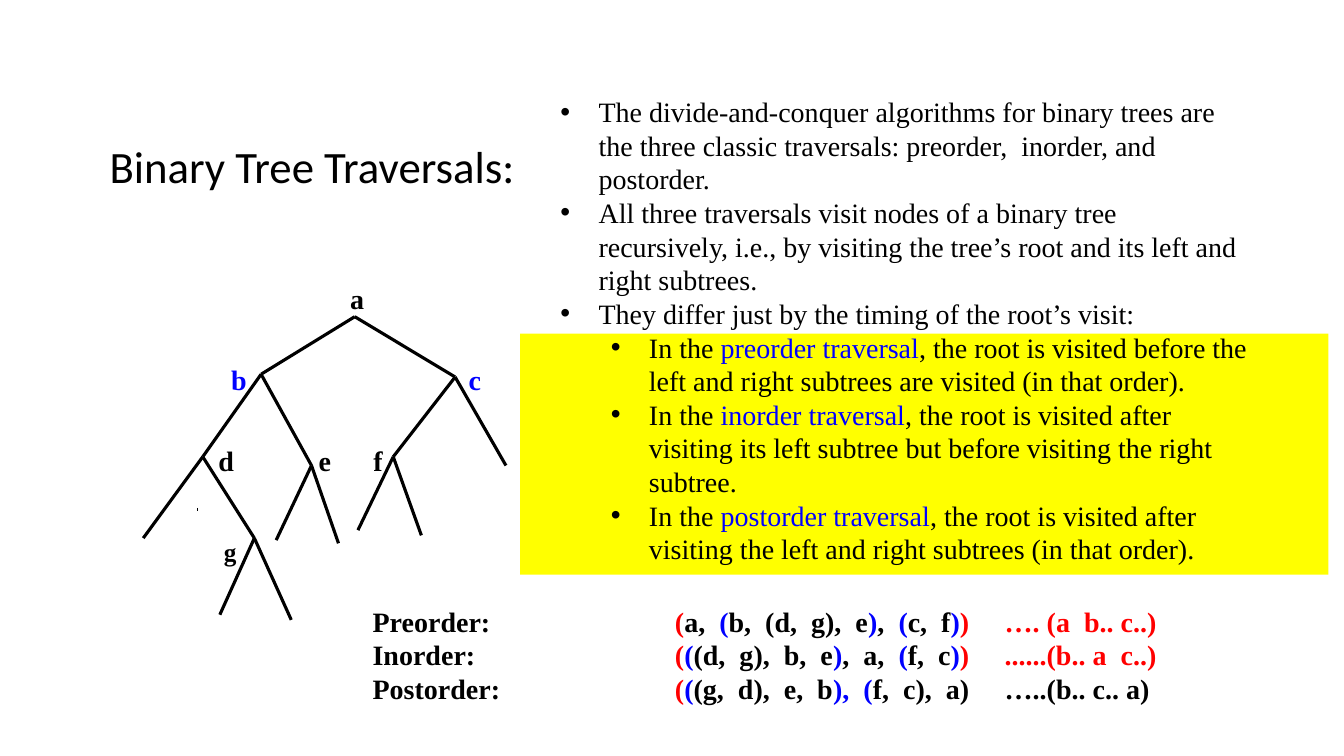
from lxml.etree import SubElement
from pptx import Presentation
from pptx.dml.color import RGBColor
from pptx.enum.shapes import MSO_CONNECTOR, MSO_SHAPE
from pptx.enum.text import MSO_ANCHOR, MSO_AUTO_SIZE, PP_ALIGN
from pptx.oxml.ns import qn
from pptx.util import Cm, Pt

BLACK, BLUE, RED, YELLOW = "000000", "0000FF", "FF0000", "FFFF00"
SERIF = "Times New Roman"


def color(hex_code):
    return RGBColor.from_string(hex_code)


def add_runs(paragraph, runs, size=20, bold=False, font=SERIF):
    """Append (text, colour) pairs to the paragraph as formatted runs."""
    for text, hex_code in runs:
        run = paragraph.add_run()
        run.text = text
        for name, value in {"name": font, "size": Pt(size), "bold": bold}.items():
            setattr(run.font, name, value)
        run.font.color.rgb = color(hex_code)


prs = Presentation()
prs.slide_width, prs.slide_height = Cm(33.87), Cm(19.05)
slide = prs.slides.add_slide(prs.slide_layouts[1])
shapes = slide.shapes
title, explanation = slide.placeholders

# Yellow band behind the three kinds of visit
band = shapes.add_shape(MSO_SHAPE.RECTANGLE, Cm(13.11), Cm(8.41), Cm(20.37), Cm(6.07))
band.shadow.inherit = False
band.fill.solid()
band.fill.fore_color.rgb = color(YELLOW)
band.line.fill.background()
shapes._spTree.insert(2, band._element)

# Title
for name, value in {"left": 2.46, "top": 3.35, "width": 10.82, "height": 1.63}.items():
    setattr(title, name, Cm(value))
title.text_frame.word_wrap = False
title.text_frame.auto_size = MSO_AUTO_SIZE.NONE
heading = title.text_frame.paragraphs[0]
heading.alignment = PP_ALIGN.CENTER
add_runs(heading, [("Binary Tree Traversals:", BLACK)], size=32, font="Calibri")

# Explanation
for name, value in {"left": 13.87, "top": 2.26, "width": 17.96, "height": 12.22}.items():
    setattr(explanation, name, Cm(value))
points = [
    (0, [("The divide-and-conquer algorithms for binary trees are the three classic "
          "traversals: preorder,  inorder, and  postorder.", BLACK)]),
    (0, [("All three traversals visit nodes of a binary tree recursively, i.e., by "
          "visiting the tree’s root and its left and right subtrees.", BLACK)]),
    (0, [("They differ just by the timing of the root’s visit:", BLACK)]),
]
for order, timing in [
    ("preorder", "before the left and right subtrees are visited (in that order)."),
    ("inorder", "after visiting its left subtree but before visiting the right subtree."),
    ("postorder", "after visiting the left and right subtrees (in that order)."),
]:
    points.append((1, [("In the ", BLACK), (f"{order} traversal", BLUE),
                       (f", the root is visited {timing}", BLACK)]))

frame = explanation.text_frame
frame.auto_size = MSO_AUTO_SIZE.NONE
frame.vertical_anchor = MSO_ANCHOR.TOP
for index, (level, runs) in enumerate(points):
    point = frame.paragraphs[0] if index == 0 else frame.add_paragraph()
    point.level = level
    point.space_before = point.space_after = Pt(0)
    props = point._p.get_or_add_pPr()
    props.set("marL", str(Cm(0.96 + 1.27 * level)))
    props.set("indent", str(Cm(-0.96)))
    SubElement(props, qn("a:buFont"), typeface="Arial")
    SubElement(props, qn("a:buChar"), char="•")
    add_runs(point, runs)

# Tree: each node's branching point, then its branches to nodes or empty subtrees
nodes = {
    "a": (8.94, 7.98), "b": (6.58, 9.43), "c": (11.47, 9.5), "d": (5.11, 11.51),
    "e": (7.85, 11.73), "f": (9.91, 11.51), "g": (6.41, 13.56),
}
branches = {
    "a": [nodes["b"], nodes["c"]],
    "b": [nodes["d"], nodes["e"]],
    "c": [nodes["f"], (12.75, 11.73)],
    "d": [(3.61, 13.56), nodes["g"]],
    "e": [(6.96, 13.61), (8.53, 13.69)],
    "f": [(9.02, 13.36), (10.62, 13.49)],
    "g": [(5.54, 15.49), (7.34, 15.62)],
}
lines = [(nodes[node], end, 2.25) for node, ends in branches.items() for end in ends]
lines.append(((4.98, 12.8), (4.98, 12.88), 0.75))
for start, end, width in lines:
    branch = shapes.add_connector(MSO_CONNECTOR.STRAIGHT, *map(Cm, start + end))
    branch.line.color.rgb = color(BLACK)
    branch.line.width = Pt(width)
    SubElement(branch._element.spPr, qn("a:effectLst"))

LABEL_SIDE = 1
for letter, x, y, hex_code, size in [
    ("a", 9, 7.51, BLACK, 20),
    ("b", 6.02, 9.55, BLUE, 20),
    ("c", 11.97, 9.55, BLUE, 20),
    ("d", 5.7, 11.59, BLACK, 20),
    ("e", 8.19, 11.59, BLACK, 20),
    ("f", 9.53, 11.59, BLACK, 20),
    ("g", 5.8, 13.89, BLACK, 18),
]:
    label = shapes.add_textbox(Cm(x - LABEL_SIDE / 2), Cm(y - LABEL_SIDE / 2),
                               Cm(LABEL_SIDE), Cm(LABEL_SIDE)).text_frame
    for side in ("left", "top", "right", "bottom"):
        setattr(label, f"margin_{side}", 0)
    label.word_wrap = True
    label.vertical_anchor = MSO_ANCHOR.MIDDLE
    label.paragraphs[0].alignment = PP_ALIGN.CENTER
    add_runs(label.paragraphs[0], [(letter, hex_code)], size=size, bold=True)

# Resulting visit orders, aligned in three columns
visit_orders = [
    [("Preorder:\t", BLACK), ("(", RED), ("a,  ", BLACK), ("(", BLUE),
     ("b,  (d,  g),  e", BLACK), (")", BLUE), (",  ", BLACK), ("(", BLUE),
     ("c,  f", BLACK), (")", BLUE), (")\t…. (a  b.. c..)", RED)],
    [("Inorder:\t", BLACK), ("(", RED), ("(", BLUE), ("(d,  g),  b,  e", BLACK),
     (")", BLUE), (",  a,  ", BLACK), ("(", BLUE), ("f,  c", BLACK), (")", BLUE),
     (")\t......(b.. a  c..)", RED)],
    [("Postorder:\t", BLACK), ("(", RED), ("(", BLUE), ("(g,  d),  e,  b", BLACK),
     ("),  (", BLUE), ("f,  c),  a)\t…..(b.. c.. a)", BLACK)],
]
orders = shapes.add_textbox(Cm(9.14), Cm(15.1), Cm(21.5), Cm(2.8)).text_frame
orders.word_wrap = True
for index, runs in enumerate(visit_orders):
    row = orders.paragraphs[0] if index == 0 else orders.add_paragraph()
    tabs = SubElement(row._p.get_or_add_pPr(), qn("a:tabLst"))
    for stop in (7.62, 15.93):
        SubElement(tabs, qn("a:tab"), pos=str(Cm(stop)), algn="l")
    add_runs(row, runs, bold=True)

prs.save("out.pptx")
